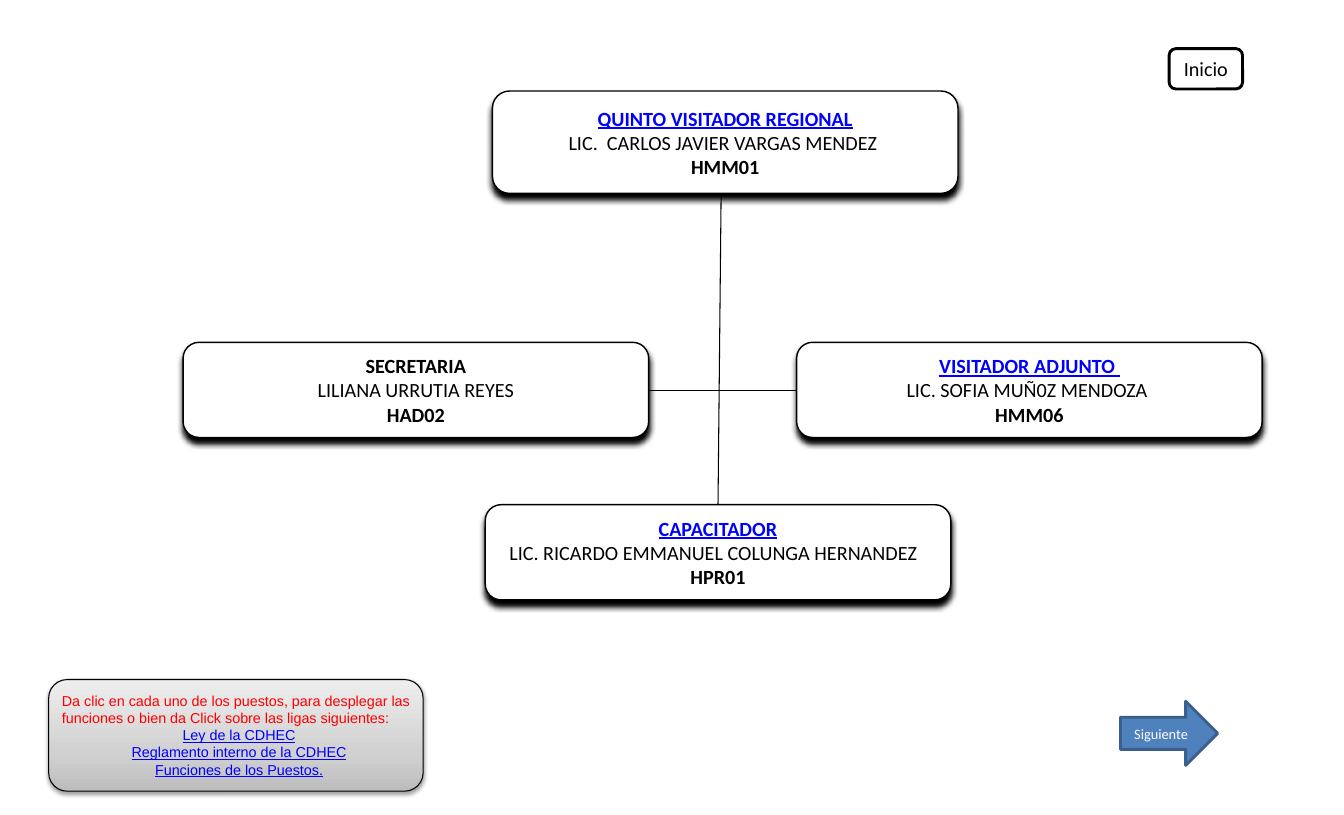
from lxml.etree import SubElement
from pptx import Presentation
from pptx.dml.color import RGBColor
from pptx.enum.shapes import MSO_CONNECTOR, MSO_SHAPE
from pptx.enum.text import MSO_ANCHOR, PP_ALIGN
from pptx.oxml.ns import qn
from pptx.util import Inches, Pt

BLACK, WHITE, LINK, RED = "000000", "FFFFFF", "0000FF", "FF0000"
ARROW_FILL, ARROW_LINE = "4F81BD", "3A5F8C"

BOX_WIDTH = 4.5
# left, top, height, position, has link style, person, code
POSITIONS = [
    (4.76, 0.88, 0.99, "QUINTO VISITADOR REGIONAL", True,
     "LIC.  CARLOS JAVIER VARGAS MENDEZ ", "HMM01"),
    (1.77, 3.31, 0.92, "SECRETARIA", False, "LILIANA URRUTIA REYES", "HAD02"),
    (7.7, 3.31, 0.92, "VISITADOR ADJUNTO ", True,
     "LIC. SOFIA MUÑ0Z MENDOZA ", "HMM06"),
    (4.69, 4.88, 0.92, "CAPACITADOR", True,
     "LIC. RICARDO EMMANUEL COLUNGA HERNANDEZ  ", "HPR01"),
]
BRANCHES = [(6.97, 1.89, 6.94, 4.88), (6.11, 3.78, 7.9, 3.78)]
INSTRUCTION = ("Da clic en cada uno de los puestos, para desplegar las funciones "
               "o bien da Click sobre las ligas siguientes:")
DOCUMENTS = ["Ley de la CDHEC", "Reglamento interno de la CDHEC",
             "Funciones de los Puestos."]
PANEL_STOPS = [(0, "BDBDBD"), (35, "D1D1D1"), (100, "EEEEEE")]


def color(value):
    return RGBColor.from_string(value)


def add_box(slide, kind, bounds, fill, line, line_width):
    shape = slide.shapes.add_shape(kind, *map(Inches, bounds))
    shape.shadow.inherit = False
    if fill:
        shape.fill.solid()
        shape.fill.fore_color.rgb = color(fill)
    shape.line.color.rgb = color(line)
    shape.line.width = Pt(line_width)
    shape.text_frame.vertical_anchor = MSO_ANCHOR.MIDDLE
    return shape


def add_shadow(shape, blur, distance, opacity):
    """Cast a black shadow straight down."""
    effects = shape.element.spPr.find(qn("a:effectLst"))
    shadow = SubElement(effects, qn("a:outerShdw"), blurRad=str(Pt(blur)),
                        dist=str(Pt(distance)), dir="5400000", algn="ctr",
                        rotWithShape="0")
    black = SubElement(shadow, qn("a:srgbClr"), val=BLACK)
    SubElement(black, qn("a:alpha"), val=str(opacity * 1000))


def set_gradient(shape, stops):
    """Fill from bottom to top with the given stops."""
    shape.fill.gradient()
    shape.fill.gradient_angle = 90
    stop_list = shape.element.spPr.find(qn("a:gradFill")).find(qn("a:gsLst"))
    for old_stop in list(stop_list):
        stop_list.remove(old_stop)
    for percent, value in stops:
        stop = SubElement(stop_list, qn("a:gs"), pos=str(percent * 1000))
        SubElement(stop, qn("a:srgbClr"), val=value)


def add_text(frame, text, size=14, font="Calibri", ink=BLACK, bold=False,
             underline=False, align=PP_ALIGN.CENTER):
    """Write text in the empty first paragraph, or in a new one."""
    first = frame.paragraphs[0]
    paragraph = frame.add_paragraph() if first.runs else first
    paragraph.alignment = align
    run = paragraph.add_run()
    run.text = text
    run.font.size = Pt(size)
    run.font.name = font
    run.font.color.rgb = color(ink)
    run.font.bold = bold
    run.font.underline = underline


def add_branch(slide, ends):
    branch = slide.shapes.add_connector(MSO_CONNECTOR.STRAIGHT, *map(Inches, ends))
    branch.line.color.rgb = color(BLACK)
    branch.line.width = Pt(0.75)
    SubElement(branch.element.spPr, qn("a:effectLst"))


def add_position(slide, left, top, height, position, linked, person, code):
    box = add_box(slide, MSO_SHAPE.ROUNDED_RECTANGLE,
                  (left, top, BOX_WIDTH, height), WHITE, BLACK, 1)
    add_shadow(box, blur=4, distance=4, opacity=100)
    frame = box.text_frame
    frame.word_wrap = False
    frame.margin_left = frame.margin_right = Inches(0.17)
    frame.margin_top = frame.margin_bottom = Inches(0.09)
    add_text(frame, position, ink=LINK if linked else BLACK, bold=True,
             underline=linked)
    add_text(frame, person)
    add_text(frame, code, bold=True)


def add_instructions(slide):
    panel = add_box(slide, MSO_SHAPE.ROUNDED_RECTANGLE, (0.47, 6.57, 3.62, 1.08),
                    None, BLACK, 0.75)
    set_gradient(panel, PANEL_STOPS)
    add_shadow(panel, blur=3.1, distance=1.6, opacity=38)
    text_box = slide.shapes.add_textbox(*map(Inches, (0.5, 6.64, 3.62, 0.94)))
    frame = text_box.text_frame
    frame.word_wrap = True
    add_text(frame, INSTRUCTION, size=10, font="Arial", ink=RED, align=PP_ALIGN.LEFT)
    for document in DOCUMENTS:
        add_text(frame, document, size=10, font="Arial", ink=LINK, underline=True)


def main():
    presentation = Presentation()
    presentation.slide_width = Inches(12.99)
    presentation.slide_height = Inches(7.88)
    slide = presentation.slides.add_slide(presentation.slide_layouts[6])

    for ends in BRANCHES:
        add_branch(slide, ends)
    for position in POSITIONS:
        add_position(slide, *position)

    home = add_box(slide, MSO_SHAPE.ROUNDED_RECTANGLE, (11.3, 0.47, 0.71, 0.39),
                   WHITE, BLACK, 2)
    add_text(home.text_frame, "Inicio")
    add_instructions(slide)
    following = add_box(slide, MSO_SHAPE.RIGHT_ARROW, (10.83, 6.78, 0.94, 0.62),
                        ARROW_FILL, ARROW_LINE, 2)
    add_text(following.text_frame, "Siguiente", size=10, ink=WHITE)

    presentation.save("out.pptx")


if __name__ == "__main__":
    main()
